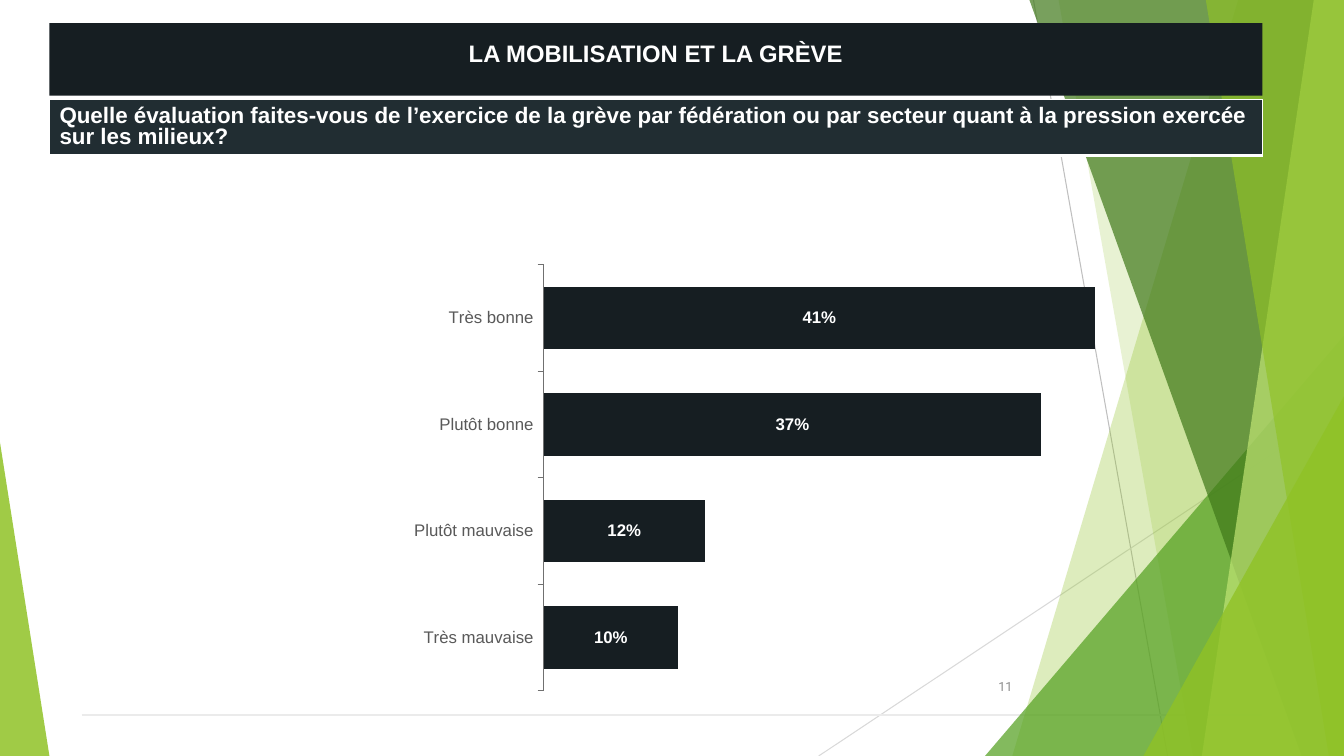
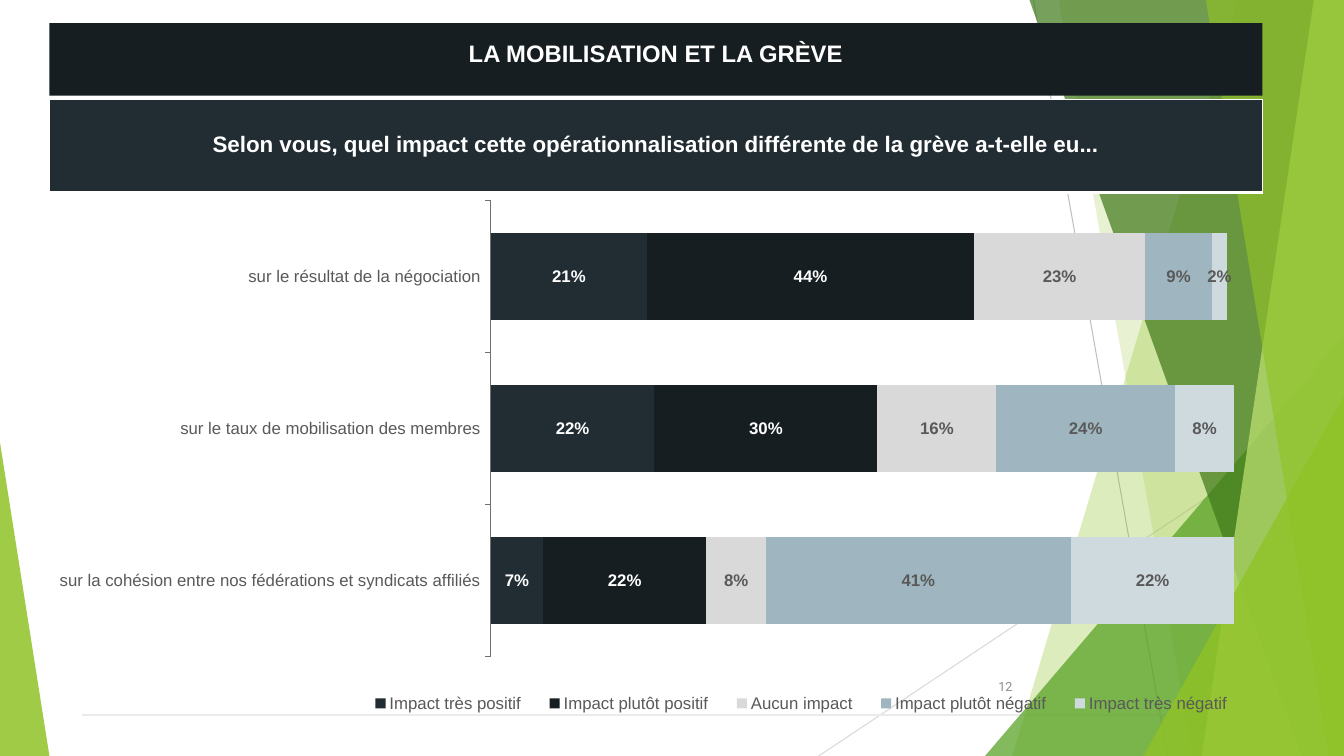
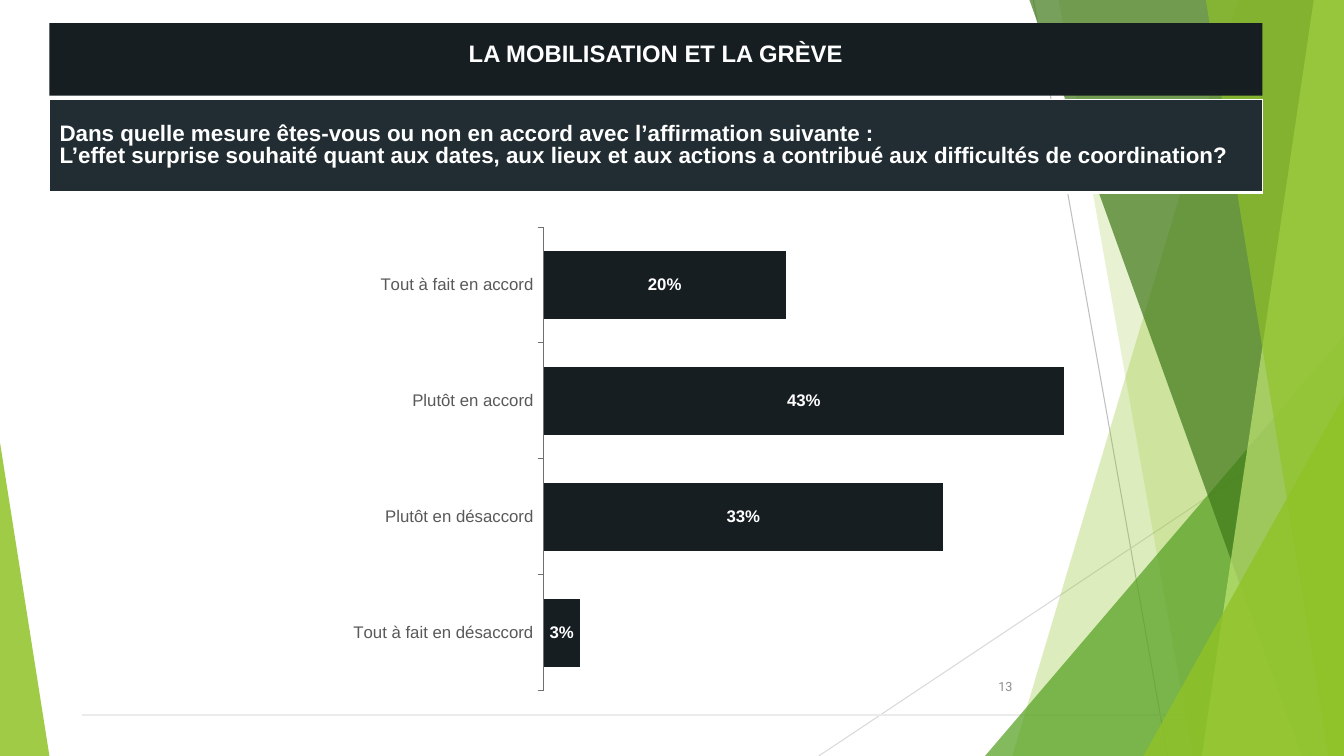
"""Build three survey slides on mobilisation and the strike."""
from lxml import etree
from pptx import Presentation
from pptx.chart.data import CategoryChartData
from pptx.dml.color import RGBColor
from pptx.enum.chart import XL_CHART_TYPE, XL_LABEL_POSITION, XL_LEGEND_POSITION, XL_TICK_MARK
from pptx.enum.shapes import MSO_CONNECTOR, MSO_SHAPE
from pptx.enum.text import MSO_ANCHOR, PP_ALIGN
from pptx.oxml.ns import qn
from pptx.util import Inches, Pt

WHITE = RGBColor(0xFF, 0xFF, 0xFF)
INK = RGBColor(0x16, 0x1E, 0x22)
SLATE = RGBColor(0x21, 0x2D, 0x32)
STEEL = RGBColor(0x9F, 0xB6, 0xC0)
MIST = RGBColor(0xCF, 0xDA, 0xDF)
SILVER = RGBColor(0xD9, 0xD9, 0xD9)
TEXT_GREY = RGBColor(0x59, 0x59, 0x59)
NUMBER_GREY = RGBColor(0x8C, 0x8C, 0x8C)
AXIS_GREY = RGBColor(0x70, 0x70, 0x70)
LINE_GREY = RGBColor(0xBF, 0xBF, 0xBF)
RULE_GREY = RGBColor(0xEB, 0xEB, 0xEB)
LIME = RGBColor(0x90, 0xC2, 0x26)
PALE_LIME = RGBColor(0xC0, 0xE4, 0x74)
GREEN = RGBColor(0x54, 0xA0, 0x21)
DARK_GREEN = RGBColor(0x3F, 0x78, 0x19)

WIDTH, HEIGHT = 13.33, 7.5
LEFT, BAND_WIDTH = 0.49, 12.03
TITLE = "LA MOBILISATION ET LA GRÈVE"

LINES = [
    ((10.25, 0), (11.58, HEIGHT), LINE_GREY, 0.75),
    ((WIDTH, 4.03), (8.12, HEIGHT), SILVER, 0.75),
    ((0.81, 7.09), (12.52, 7.09), RULE_GREY, 1.5),
]
FACETS = [
    ("sheet", (12.28, 10.04), LIME, 30),
    ("sheet", (10.5, 11.83), LIME, 20),
    ("peak", (9.77, 3.33, 3.56, 1), GREEN, 72),
    ("sheet", (10.21, 12.91), DARK_GREEN, 70),
    ("sheet", (13.03, 11.92), PALE_LIME, 70),
    ("sheet", (11.96, 13.18), LIME, 65),
    ("peak", (11.34, 3.93, 1.99, 1), LIME, 80),
    ("peak", (0, 4.39, 0.49, 0), LIME, 85),
]
PAGES = [
    {
        "number": "11",
        "question": "Quelle évaluation faites-vous de l’exercice de la grève par fédération "
                    "ou par secteur quant à la pression exercée sur les milieux?",
        "align": PP_ALIGN.LEFT, "band_height": 0.52,
        "categories": ["Très bonne", "Plutôt bonne", "Plutôt mauvaise", "Très mauvaise"],
        "series": [("Series 1", (0.41, 0.37, 0.12, 0.1), INK, WHITE)],
        "frame": (0.33, 1.81, 11.35, 5.83), "plot": (0.446, 0.14, 0.529, 0.725),
        "maximum": 0.45, "stacked": False,
    },
    {
        "number": "12",
        "question": "Selon vous, quel impact cette opérationnalisation différente "
                    "de la grève a-t-elle eu...",
        "align": PP_ALIGN.CENTER, "band_height": 0.92,
        "categories": ["sur le résultat de la négociation",
                       "sur le taux de mobilisation des membres",
                       "sur la cohésion entre nos fédérations et syndicats affiliés"],
        "series": [
            ("Impact très positif", (0.21, 0.22, 0.07), SLATE, WHITE),
            ("Impact plutôt positif", (0.44, 0.3, 0.22), INK, WHITE),
            ("Aucun impact", (0.23, 0.16, 0.08), SILVER, TEXT_GREY),
            ("Impact plutôt négatif", (0.09, 0.24, 0.41), STEEL, TEXT_GREY),
            ("Impact très négatif", (0.02, 0.08, 0.22), MIST, TEXT_GREY),
        ],
        "frame": (LEFT, 1.89, BAND_WIDTH, 5.3), "plot": (0.364, 0.019, 0.613, 0.854),
        "maximum": 1, "stacked": True,
    },
    {
        "number": "13",
        "question": "Dans quelle mesure êtes-vous ou non en accord avec l’affirmation suivante :\n"
                    "L’effet surprise souhaité quant aux dates, aux lieux et aux actions "
                    "a contribué aux difficultés de coordination?",
        "align": PP_ALIGN.LEFT, "band_height": 0.92,
        "categories": ["Tout à fait en accord", "Plutôt en accord",
                       "Plutôt en désaccord", "Tout à fait en désaccord"],
        "series": [("Series 1", (0.2, 0.43, 0.33, 0.03), INK, WHITE)],
        "frame": (0.33, 1.81, 11.35, 5.83), "plot": (0.446, 0.076, 0.529, 0.789),
        "maximum": 0.5, "stacked": False,
    },
]


def style_font(font, size, color, bold=False, name="Arial"):
    """Set the face, size, colour and weight of a font."""
    font.name, font.size, font.bold = name, Pt(size), bold
    font.color.rgb = color


def place_chart_part(parent, position, bounds, inner=False):
    """Give a chart part a fixed place, in fractions of the chart."""
    for old in parent.findall(qn("c:layout")):
        parent.remove(old)
    layout = etree.Element(qn("c:layout"))
    manual = etree.SubElement(layout, qn("c:manualLayout"))
    settings = [("layoutTarget", "inner")] if inner else []
    settings += [("xMode", "edge"), ("yMode", "edge")]
    settings += zip("xywh", bounds)
    for tag, value in settings:
        etree.SubElement(manual, qn(f"c:{tag}")).set("val", str(value))
    parent.insert(position, layout)


deck = Presentation()
deck.slide_width, deck.slide_height = Inches(WIDTH), Inches(HEIGHT)

for content in PAGES:
    page = deck.slides.add_slide(deck.slide_layouts[6])

    for start, end, color, weight in LINES:
        line = page.shapes.add_connector(
            MSO_CONNECTOR.STRAIGHT, *[Inches(value) for value in start + end])
        line.line.color.rgb, line.line.width = color, Pt(weight)
        etree.SubElement(line.element.spPr, qn("a:effectLst"))

    for kind, geometry, color, opacity in FACETS:
        if kind == "sheet":
            top_x, bottom_x = geometry
            builder = page.shapes.build_freeform(Inches(top_x), 0)
            corners = [(WIDTH, 0), (WIDTH, HEIGHT), (bottom_x, HEIGHT)]
            builder.add_line_segments([(Inches(x), Inches(y)) for x, y in corners], close=True)
            facet = builder.convert_to_shape()
        else:
            left, top, width, apex = geometry
            facet = page.shapes.add_shape(
                MSO_SHAPE.ISOSCELES_TRIANGLE, Inches(left), Inches(top),
                Inches(width), Inches(HEIGHT - top))
            facet.adjustments[0] = apex
        facet.shadow.inherit = False
        facet.line.fill.background()
        facet.fill.solid()
        facet.fill.fore_color.rgb = color
        tint = facet.element.spPr.find(qn("a:solidFill")).find(qn("a:srgbClr"))
        etree.SubElement(tint, qn("a:alpha")).set("val", str(opacity * 1000))

    number = page.shapes.add_textbox(Inches(9.39), Inches(6.61), Inches(0.75), Inches(0.4))
    number.text_frame.word_wrap = True
    number.text_frame.vertical_anchor = MSO_ANCHOR.MIDDLE
    para = number.text_frame.paragraphs[0]
    para.text, para.alignment = content["number"], PP_ALIGN.RIGHT
    style_font(para.runs[0].font, 9, NUMBER_GREY, name="Roboto")

    band_height = Inches(content["band_height"])
    table = page.shapes.add_table(
        1, 1, Inches(LEFT), Inches(0.99), Inches(BAND_WIDTH), band_height).table
    table.first_row = table.horz_banding = False
    question = table.cell(0, 0)
    question.text_frame.text = content["question"]
    question.vertical_anchor = MSO_ANCHOR.MIDDLE
    for para in question.text_frame.paragraphs:
        para.alignment, para.line_spacing = content["align"], 0.85
        style_font(para.runs[0].font, 16, WHITE, bold=True)
    question.fill.solid()
    question.fill.fore_color.rgb = SLATE
    properties = question._tc.get_or_add_tcPr()
    for position, (side, weight) in enumerate([("R", 1), ("T", 1), ("B", 3)]):
        border = etree.Element(qn(f"a:ln{side}"), w=str(Pt(weight)))
        paint = etree.SubElement(border, qn("a:solidFill"))
        etree.SubElement(paint, qn("a:srgbClr")).set("val", str(WHITE))
        properties.insert(position, border)

    title = page.shapes.add_shape(
        MSO_SHAPE.RECTANGLE, Inches(LEFT), Inches(0.23), Inches(BAND_WIDTH), Inches(0.72))
    title.shadow.inherit = False
    title.line.fill.background()
    title.fill.solid()
    title.fill.fore_color.rgb = INK
    frame = title.text_frame
    frame.text = TITLE
    frame.vertical_anchor = MSO_ANCHOR.TOP
    frame.margin_left = frame.margin_right = frame.margin_bottom = 0
    frame.margin_top = Inches(0.15)
    frame.paragraphs[0].alignment = PP_ALIGN.CENTER
    style_font(frame.paragraphs[0].runs[0].font, 17, WHITE, bold=True)

    stacked = content["stacked"]
    data = CategoryChartData(number_format="0%")
    data.categories = content["categories"]
    for name, values, color, label_color in content["series"]:
        data.add_series(name, values)
    chart_type = XL_CHART_TYPE.BAR_STACKED if stacked else XL_CHART_TYPE.BAR_CLUSTERED
    chart = page.shapes.add_chart(
        chart_type, *[Inches(value) for value in content["frame"]], data).chart
    style_font(chart.font, 12, TEXT_GREY)
    chart.has_title = False
    chart.has_legend = stacked
    place_chart_part(chart.plots[0]._element.getparent(), 0, content["plot"], inner=True)
    if stacked:
        chart.legend.position = XL_LEGEND_POSITION.BOTTOM
        chart.legend.include_in_layout = False
        style_font(chart.legend.font, 12, TEXT_GREY)
        place_chart_part(chart.legend._element, 1, (0.25, 0.93, 0.74, 0.06))

    plot = chart.plots[0]
    plot.vary_by_categories = False
    plot.gap_width = 75 if stacked else 70
    plot.overlap = 100 if stacked else 0
    for series, (name, values, color, label_color) in zip(plot.series, content["series"]):
        series.format.fill.solid()
        series.format.fill.fore_color.rgb = color
        labels = series.data_labels
        labels.show_value = True
        labels.position = XL_LABEL_POSITION.CENTER
        labels.number_format, labels.number_format_is_linked = "0%", False
        style_font(labels.font, 12, label_color, bold=True)

    axis = chart.category_axis
    axis.reverse_order = True
    axis.major_tick_mark = XL_TICK_MARK.OUTSIDE
    axis.format.line.color.rgb, axis.format.line.width = AXIS_GREY, Pt(0.75)
    style_font(axis.tick_labels.font, 12, TEXT_GREY)
    scale = chart.value_axis
    scale.visible = scale.has_major_gridlines = False
    scale.minimum_scale, scale.maximum_scale = 0, content["maximum"]

deck.save("out.pptx")
